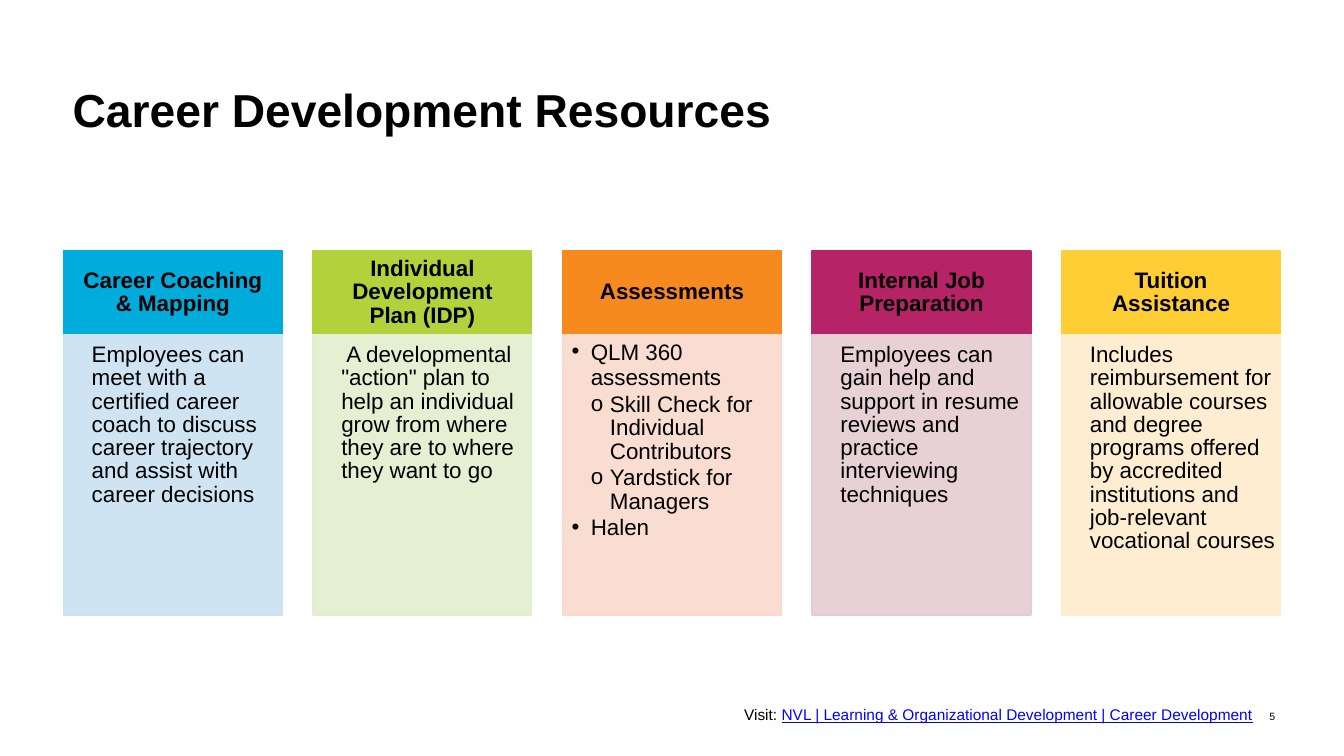
"""Build the career development resources slide."""
from dataclasses import dataclass
from typing import Any

from lxml.etree import SubElement
from pptx import Presentation
from pptx.dml.color import RGBColor
from pptx.enum.shapes import MSO_SHAPE as Preset
from pptx.enum.text import MSO_ANCHOR as Anchor, MSO_AUTO_SIZE as AutoSize, PP_ALIGN as Align
from pptx.oxml.ns import qn
from pptx.util import Pt

EMU_PER_PX = 9144
FONT = "Arial"
BLACK = "000000"
LINK_BLUE = "0000FF"
COLUMN_LEFT, COLUMN_WIDTH, COLUMN_PITCH = 63, 217, 247.5
HEADER_TOP, HEADER_HEIGHT = 249, 83
BODY_TOP, BODY_HEIGHT = 332, 278


@dataclass(frozen=True)
class Line:
    text: str
    margin: int = 28
    indent: int = 0
    spacing: float = 16.6
    before: float = 0
    bullet: str = ""
    level: int = 0


@dataclass(frozen=True)
class Column:
    heading: str
    color: str
    tint: str
    lines: tuple[Line, ...]
    inset: int = 9


COLUMNS = (
    Column("Career Coaching & Mapping", "00ACDC", "CAE2F1", (
        Line("Employees can meet with a certified career coach to discuss "
             "career trajectory and assist with career decisions"),)),
    Column("Individual Development Plan (IDP)", "B1D23A", "E3EECE", (
        Line("A developmental \"action\" plan to help an individual grow from "
             "where they are to where they want to go", indent=5),)),
    Column("Assessments", "F68A1F", "FADACC", (
        Line("QLM 360 assessments", 28, -19, 17.9, 0, "•"),
        Line("Skill Check for Individual Contributors", 47, -19, 16.6, 2.9, "o", 1),
        Line("Yardstick for Managers", 47, -19, 16.6, 2.6, "o", 1),
        Line("Halen", 28, -19, 19.1, 0, "•")), inset=5),
    Column("Internal Job Preparation", "B72367", "E6CCD2", (
        Line("Employees can gain help and support in resume reviews and "
             "practice interviewing techniques"),)),
    Column("Tuition Assistance", "FFCD34", "FFECCD", (
        Line("Includes reimbursement for allowable courses and degree programs "
             "offered by accredited institutions and job-relevant vocational courses"),)),
)


def px(length: float) -> int:
    """Turn pixels into EMU."""
    return round(length * EMU_PER_PX)


def rgb(color: str) -> RGBColor:
    """Turn a hex string into a colour."""
    return RGBColor.from_string(color)


def assign(target: Any, values: dict[str, Any]) -> None:
    """Set each named attribute on the target."""
    for name, value in values.items():
        setattr(target, name, value)


def set_frame(frame: Any, top: int = 0, side: int = 0, anchor: Any = Anchor.TOP) -> None:
    """Give a text frame its insets, anchor and wrapping."""
    assign(frame, {"margin_left": px(side), "margin_right": px(side), "margin_top": px(top),
                   "margin_bottom": 0, "vertical_anchor": anchor,
                   "word_wrap": True, "auto_size": AutoSize.NONE})


def add_span(para: Any, text: str, size: float, color: str = BLACK, **extra: bool) -> None:
    """Append a formatted run to a paragraph."""
    span = para.add_run()
    span.text = text
    assign(span.font, {"name": FONT, "size": Pt(size), **extra})
    span.font.color.rgb = rgb(color)


def add_panel(page: Any, left: float, top: int, height: int, fill: str, line: str) -> Any:
    """Draw one filled rectangle of a column."""
    box = page.shapes.add_shape(Preset.RECTANGLE, px(left), px(top), px(COLUMN_WIDTH), px(height))
    box.shadow.inherit = False
    box.fill.solid()
    box.fill.fore_color.rgb = rgb(fill)
    box.line.color.rgb = rgb(line)
    box.line.width = Pt(1)
    return box


def add_line(para: Any, line: Line) -> None:
    """Fill a paragraph with one line of a column body."""
    props = para._p.get_or_add_pPr()
    props.set("marL", str(px(line.margin)))
    props.set("indent", str(px(line.indent)))
    if line.bullet:
        SubElement(props, qn("a:buFont")).set("typeface", FONT)
        SubElement(props, qn("a:buChar")).set("char", line.bullet)
    assign(para, {"alignment": Align.LEFT, "level": line.level,
                  "line_spacing": Pt(line.spacing), "space_before": Pt(line.before)})
    add_span(para, line.text, 16)


def add_column(page: Any, left: float, column: Column) -> None:
    """Draw a column header and its tinted body."""
    header = add_panel(page, left, HEADER_TOP, HEADER_HEIGHT, column.color, column.color)
    set_frame(header.text_frame, side=18, anchor=Anchor.MIDDLE)
    para = header.text_frame.paragraphs[0]
    assign(para, {"alignment": Align.CENTER, "line_spacing": Pt(16.6)})
    add_span(para, column.heading, 16, bold=True)

    body = add_panel(page, left, BODY_TOP, BODY_HEIGHT, column.tint, column.tint)
    color = body.fill._xPr.find(qn("a:solidFill"))[0]
    SubElement(color, qn("a:alpha")).set("val", "90000")
    frame = body.text_frame
    set_frame(frame, column.inset)
    for index, line in enumerate(column.lines):
        add_line(frame.add_paragraph() if index else frame.paragraphs[0], line)


def add_note(page: Any, left: int, top: int, width: int, height: int) -> Any:
    """Add a small text box and return its paragraph."""
    box = page.shapes.add_textbox(px(left), px(top), px(width), px(height))
    set_frame(box.text_frame, 1)
    return box.text_frame.paragraphs[0]


def main() -> None:
    """Build and save the deck."""
    deck = Presentation()
    assign(deck, {"slide_width": px(1333), "slide_height": px(750)})
    page = deck.slides.add_slide(deck.slide_layouts[5])

    title = page.shapes.title
    assign(title, {"left": px(72), "top": px(69), "width": px(1190), "height": px(76)})
    set_frame(title.text_frame, 12)
    para = title.text_frame.paragraphs[0]
    para.alignment = Align.LEFT
    add_span(para, "Career Development Resources", 33, bold=True)

    for index, column in enumerate(COLUMNS):
        add_column(page, COLUMN_LEFT + index * COLUMN_PITCH, column)

    add_span(add_note(page, 1259, 703, 12, 15), "5", 7.5)
    visit = add_note(page, 738, 699, 512, 21)
    add_span(visit, "Visit: ", 11)
    add_span(visit, "NVL | Learning & Organizational Development | Career Development",
             11, LINK_BLUE, underline=True)
    deck.save("out.pptx")


if __name__ == "__main__":
    main()
